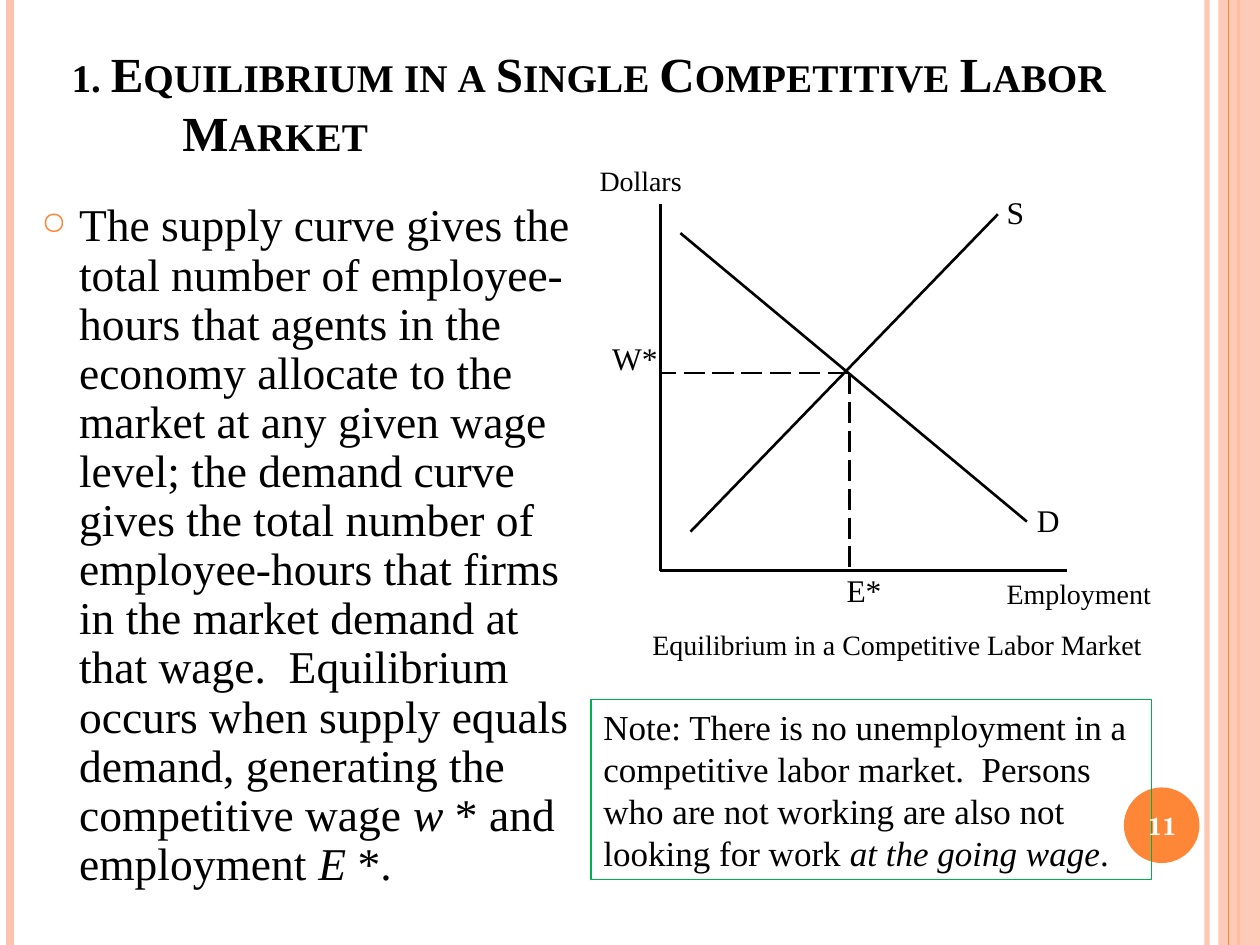
from lxml import etree
from pptx import Presentation
from pptx.dml.color import RGBColor
from pptx.enum.dml import MSO_LINE_DASH_STYLE as Dash
from pptx.enum.shapes import MSO_CONNECTOR, MSO_SHAPE as Shape
from pptx.enum.text import MSO_ANCHOR as Anchor, PP_ALIGN as Align
from pptx.oxml.ns import qn
from pptx.util import Inches, Pt

SERIF = "Times New Roman"
BLACK, WHITE, ORANGE, PEACH, GREEN = "000000", "FFFFFF", "FE8637", "FEC3AE", "00B050"


def color(value):
    return RGBColor.from_string(value)


def set_alpha(fill_parent, percent):
    """Make the solid fill inside an element partly transparent."""
    srgb = fill_parent.find(qn("a:solidFill")).find(qn("a:srgbClr"))
    etree.SubElement(srgb, qn("a:alpha"), val=str(percent * 1000))


def add_line(slide, start, end, hex_color=BLACK, width=1.5, dash=None):
    points = [Inches(value) for value in (*start, *end)]
    line = slide.shapes.add_connector(MSO_CONNECTOR.STRAIGHT, *points)
    line.line.color.rgb = color(hex_color)
    line.line.width = Pt(width)
    if dash:
        line.line.dash_style = dash
    etree.SubElement(line._element.spPr, qn("a:effectLst"))
    return line


def add_shape(slide, kind, box, fill=None):
    shape = slide.shapes.add_shape(kind, *[Inches(value) for value in box])
    shape.shadow.inherit = False
    shape.line.fill.background()
    if fill:
        shape.fill.solid()
        shape.fill.fore_color.rgb = color(fill)
    else:
        shape.fill.background()
    return shape


def write(shape, runs, size, hex_color=BLACK, font=SERIF, bold=False,
          anchor=Anchor.TOP, align=Align.LEFT, wrap=True):
    """Fill a shape with one paragraph of (text, italic) runs."""
    frame = shape.text_frame
    frame.word_wrap = wrap
    frame.vertical_anchor = anchor
    paragraph = frame.paragraphs[0]
    paragraph.alignment = align
    for text, italic in runs:
        run = paragraph.add_run()
        run.text = text
        run.font.name = font
        run.font.size = Pt(size)
        run.font.bold = bold
        run.font.italic = italic
        run.font.color.rgb = color(hex_color)
    return paragraph


def add_text(slide, box, runs, size, **options):
    textbox = slide.shapes.add_textbox(*[Inches(value) for value in box])
    return write(textbox, runs, size, **options)


def set_hanging(paragraph, indent):
    properties = paragraph._p.get_or_add_pPr()
    properties.set("marL", str(Inches(indent)))
    properties.set("indent", str(-Inches(indent)))
    return properties


def add_side_bands(slide, width, height):
    def vertical(x, hex_color, line_width):
        return add_line(slide, (x, 0), (x, height), hex_color, line_width)

    inner = vertical(width - 0.42, PEACH, 3)
    set_alpha(inner.line._ln, 93)
    vertical(0.08, PEACH, 4.5)
    vertical(width - 0.17, ORANGE, 1.5)
    band = add_shape(slide, Shape.RECTANGLE, (width - 0.33, 0, 0.33, height), PEACH)
    set_alpha(band._element.spPr, 87)
    vertical(width - 0.25, ORANGE, 0.75)


def add_title(slide, box):
    paragraph = add_text(
        slide, box, [("1. Equilibrium in a Single Competitive Labor Market", False)],
        28, bold=True, anchor=Anchor.MIDDLE)
    set_hanging(paragraph, 0.88)
    paragraph.runs[0].font._element.set("cap", "small")


def add_body(slide, box):
    runs = [
        ("The supply curve gives the total number of employee-hours that agents in "
         "the economy allocate to the market at any given wage level; the demand "
         "curve gives the total number of employee-hours that firms in the market "
         "demand at that wage.  Equilibrium occurs when supply equals demand, "
         "generating the competitive wage ", False),
        ("w ", True), ("* and employment", False), (" E ", True), ("*.", False)]
    paragraph = add_text(slide, box, runs, 26)
    paragraph.line_spacing = 0.9
    paragraph.space_before = paragraph.space_after = Pt(6)
    # Small orange ring as the bullet
    properties = set_hanging(paragraph, 0.3)
    bullet_color = etree.SubElement(properties, qn("a:buClr"))
    etree.SubElement(bullet_color, qn("a:srgbClr"), val=ORANGE)
    etree.SubElement(properties, qn("a:buSzPct"), val="70000")
    etree.SubElement(properties, qn("a:buChar"), char="○")


def add_market_diagram(slide, box):
    left, top, width, height = box
    bottom = top + height

    def at(x, y):
        """Point measured right and up from the origin of the axes."""
        return left + x, bottom - y

    # Axes, demand and supply
    origin = at(0, 0)
    add_line(slide, origin, at(0, height))
    add_line(slide, origin, at(width, 0))
    add_line(slide, at(0.16, 2.68), at(2.91, 0.39))
    add_line(slide, at(0.24, 0.31), at(2.68, 2.83))

    # Guides from the equilibrium point to both axes
    wage, employment = 1.57, 1.5
    equilibrium = at(employment, wage)
    for foot in (at(0, wage), at(employment, 0)):
        add_line(slide, equilibrium, foot, dash=Dash.LONG_DASH)

    # Labels: text, size, x, y, width
    labels = [
        ("Equilibrium in a Competitive Labor Market", 16, -0.16, -0.4, 4.11),
        ("Employment", 16, 2.65, 0, 1.35),
        ("Dollars", 16, -0.58, 3.28, 0.85),
        ("E*", 18, 1.38, 0.05, 0.48),
        ("W*", 18, -0.48, 1.89, 0.57),
        ("D", 18, 2.89, 0.6, 0.38),
        ("S", 18, 2.65, 3.05, 0.34)]
    for text, size, x, y, label_width in labels:
        label_height = 0.37 if size == 16 else 0.4
        add_text(slide, (*at(x, y), label_width, label_height),
                 [(text, False)], size, wrap=False)


def add_note(slide, box):
    note = add_shape(slide, Shape.RECTANGLE, box)
    note.line.color.rgb = color(GREEN)
    note.line.width = Pt(0.75)
    write(note, [
        ("Note: There is no unemployment in a competitive labor market.  Persons "
         "who are not working are also not looking for work ", False),
        ("at the going wage", True), (".", False)], 20)


def add_page_number(slide, box):
    add_text(slide, box, [("11", False)], 14, hex_color=WHITE, bold=True,
             font="TeX Gyre Schola", anchor=Anchor.MIDDLE, align=Align.CENTER)


def main():
    presentation = Presentation()
    presentation.slide_width, presentation.slide_height = Inches(10), Inches(7.5)
    slide = presentation.slides.add_slide(presentation.slide_layouts[6])

    add_side_bands(slide, 10, 7.5)
    add_shape(slide, Shape.OVAL, (8.92, 6.25, 0.6, 0.6), ORANGE)
    add_title(slide, (0.47, 0.23, 9.06, 1.17))
    add_body(slide, (0.23, 1.56, 4.53, 5.7))
    add_market_diagram(slide, (5.24, 1.62, 3.23, 2.91))
    add_note(slide, (4.69, 5.55, 4.45, 1.43))
    add_page_number(slide, (8.89, 6.27, 0.67, 0.57))
    presentation.save("out.pptx")


if __name__ == "__main__":
    main()
